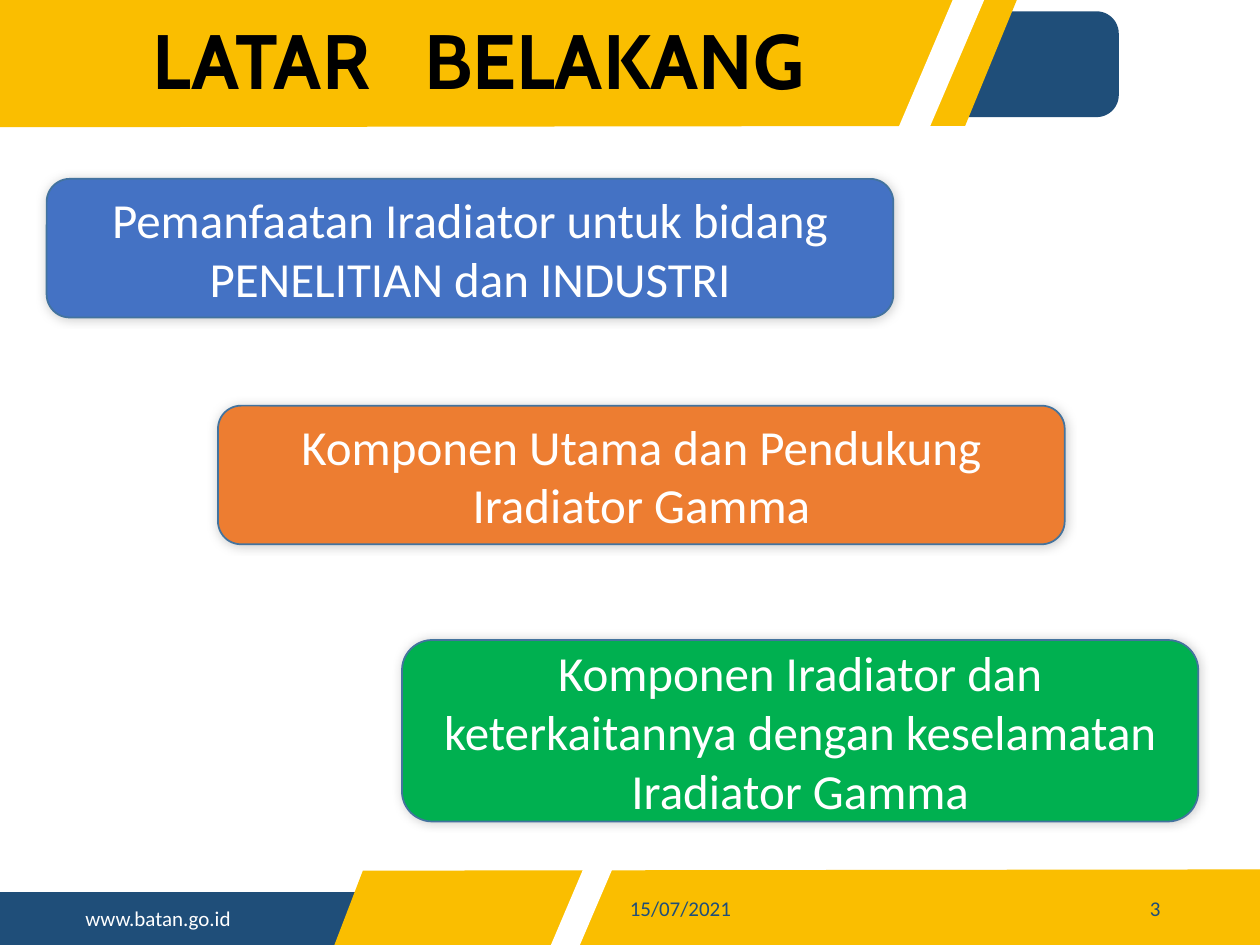
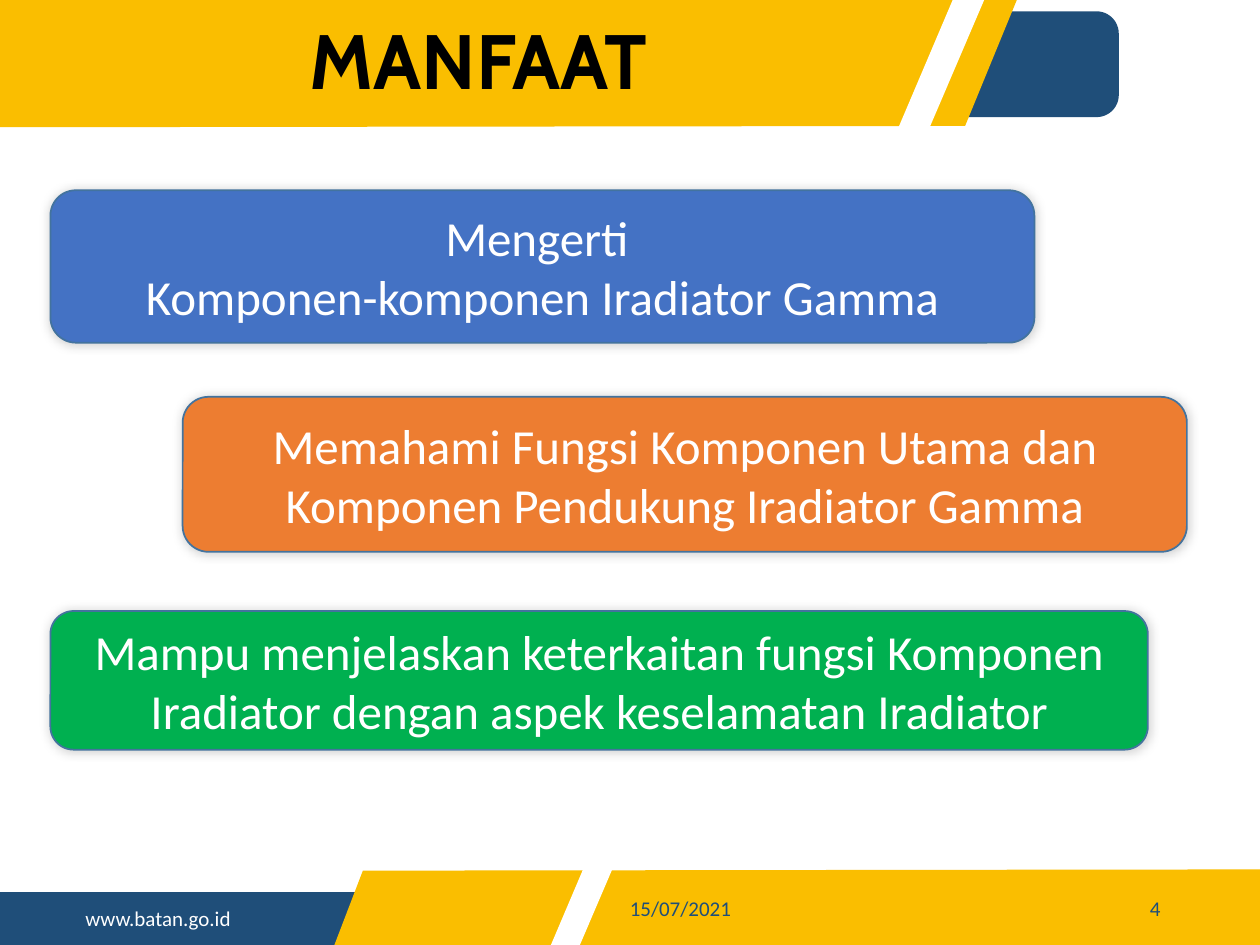
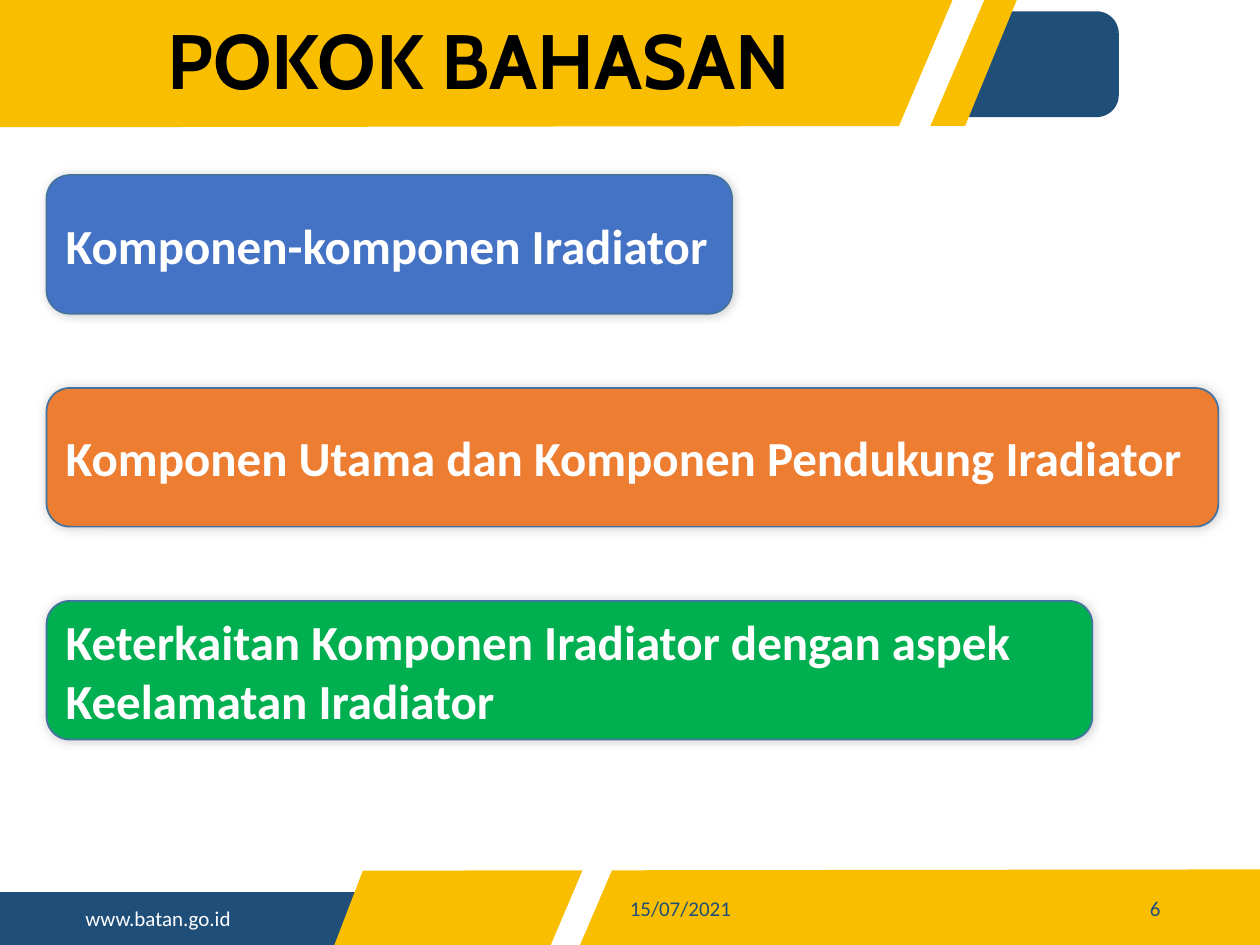
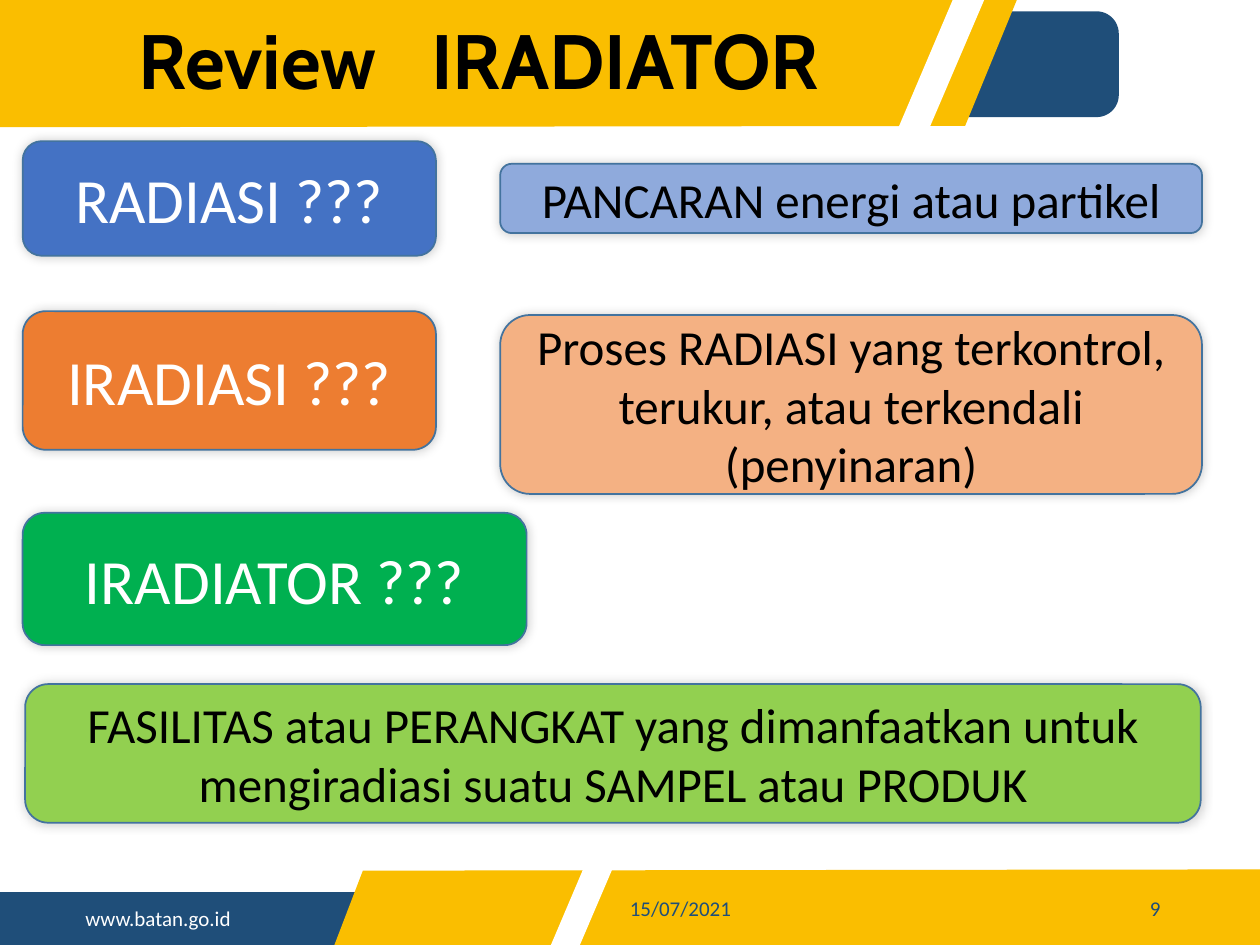
"""Build four slides about gamma irradiators, with a shared yellow and blue frame."""
from lxml import etree
from pptx import Presentation
from pptx.dml.color import RGBColor
from pptx.enum.shapes import MSO_SHAPE as SHAPE
from pptx.enum.text import MSO_ANCHOR as ANCHOR, PP_ALIGN as ALIGN
from pptx.oxml.ns import qn
from pptx.util import Inches, Pt

NAVY = RGBColor(0x1F, 0x4E, 0x79)
YELLOW = RGBColor(0xFA, 0xBE, 0x00)
WHITE = RGBColor(0xFF, 0xFF, 0xFF)
BLACK = RGBColor(0x00, 0x00, 0x00)
BLUE = RGBColor(0x44, 0x72, 0xC4)
ORANGE = RGBColor(0xED, 0x7D, 0x31)
GREEN = RGBColor(0x00, 0xB0, 0x50)
PALE_BLUE = RGBColor(0x8F, 0xAA, 0xDC)
PALE_ORANGE = RGBColor(0xF4, 0xB1, 0x83)
PALE_GREEN = RGBColor(0x92, 0xD0, 0x50)
CARD_EDGE = RGBColor(0x43, 0x73, 0x9E)
CARD_FILLS = (BLUE, ORANGE, GREEN)

BODY_FONT = "Calibri"
TITLE_FONT = "Cabin"
SITE = "www.batan.go.id"
DATE = "15/07/2021"

FOOTER_BAND = [(2.88, 6.91), (10, 6.9), (10, 7.51), (2.65, 7.51)]
TITLE_BAND = [(0, 0), (8.07, 0), (7.66, 1), (0, 1.01)]
SLASH = [(7.57, -0.02), (7.82, -0.02), (4.59, 7.53), (4.36, 7.53)]


def write(frame, text, size=12, color=BLACK, font=BODY_FONT, bold=False,
          align=ALIGN.LEFT, anchor=ANCHOR.MIDDLE, line_spacing=None, gap=0):
    """Write text into a frame, one paragraph a line; gap widens the first space."""
    frame.word_wrap = True
    frame.vertical_anchor = anchor
    for index, line in enumerate(text.split("\n")):
        paragraph = frame.add_paragraph() if index else frame.paragraphs[0]
        paragraph.alignment = align
        paragraph.line_spacing = line_spacing
        for part in line.partition(" ") if gap else [line]:
            run = paragraph.add_run()
            run.text = part
            run.font.name = font
            run.font.size = Pt(size)
            run.font.bold = bold
            run.font.color.rgb = color
            if part == " ":
                run.font._element.set("spc", str(gap * 100))


def add_text(slide, box, text, **style):
    """Add a text box at box (left, top, width, height in inches)."""
    write(slide.shapes.add_textbox(*map(Inches, box)).text_frame, text, **style)


def paint(shape, fill):
    """Give a shape a plain fill without line or shadow."""
    shape.shadow.inherit = False
    shape.fill.solid()
    shape.fill.fore_color.rgb = fill
    shape.line.fill.background()


def add_block(slide, kind, box, fill):
    """Add a plain preset shape and return it."""
    block = slide.shapes.add_shape(kind, *map(Inches, box))
    paint(block, fill)
    return block


def add_band(slide, corners, fill):
    """Add a slanted band through its corners."""
    start, *others = [(Inches(x), Inches(y)) for x, y in corners]
    outline = slide.shapes.build_freeform(*start)
    outline.add_line_segments(others, close=True)
    paint(outline.convert_to_shape(), fill)


def add_glow(shape):
    """Add a faint soft shadow around a shape."""
    effects = shape._element.spPr.find(qn("a:effectLst"))
    shadow = etree.SubElement(effects, qn("a:outerShdw"), blurRad=str(Pt(6)),
                              dist="0", dir="18900000", rotWithShape="0")
    tint = etree.SubElement(shadow, qn("a:srgbClr"), val=str(BLACK))
    etree.SubElement(tint, qn("a:alpha"), val="20000")


def add_card(slide, box, text, fill, color=WHITE, size=28, align=ALIGN.CENTER, bold=False):
    """Add a rounded card with an edge, a soft shadow and text."""
    card = add_block(slide, SHAPE.ROUNDED_RECTANGLE, box, fill)
    card.line.color.rgb = CARD_EDGE
    card.line.width = Pt(1)
    add_glow(card)
    write(card.text_frame, text, size=size, color=color, align=align, bold=bold)


def add_framed_slide(deck, title, number, gap=0):
    """Add a slide with the shared bands, title and footer."""
    slide = deck.slides.add_slide(deck.slide_layouts[6])
    add_block(slide, SHAPE.RECTANGLE, (0, 7.08, 2.97, 0.43), NAVY)
    add_band(slide, FOOTER_BAND, YELLOW)
    tab = add_block(slide, SHAPE.ROUNDED_RECTANGLE, (6.92, 0.09, 1.96, 0.84), NAVY)
    tab.adjustments[0] = 0.21
    add_band(slide, TITLE_BAND, YELLOW)
    add_text(slide, (0.58, 7.14, 2.04, 0.3), SITE, color=WHITE, anchor=ANCHOR.TOP)
    add_band(slide, SLASH, WHITE)
    add_text(slide, (0.69, 0.09, 6.22, 0.84), title, size=44, font=TITLE_FONT,
             bold=True, align=ALIGN.CENTER, line_spacing=0.9, gap=gap)
    add_text(slide, (4.9, 7.01, 2.43, 0.4), DATE, color=NAVY)
    add_text(slide, (8.68, 7.01, 0.63, 0.4), str(number), color=NAVY, align=ALIGN.RIGHT)
    return slide


def add_cards(slide, cards, **style):
    """Add (box, text) cards in the blue, orange and green order."""
    for (box, text), fill in zip(cards, CARD_FILLS):
        add_card(slide, box, text, fill, **style)


def build_background(deck):
    """Build the background slide."""
    add_cards(add_framed_slide(deck, "LATAR BELAKANG", 3, gap=21), [
        ((0.37, 1.42, 6.72, 1.1), "Pemanfaatan Iradiator untuk bidang PENELITIAN dan INDUSTRI"),
        ((1.73, 3.22, 6.72, 1.1), "Komponen Utama dan Pendukung Iradiator Gamma"),
        ((3.19, 5.08, 6.32, 1.44),
         "Komponen Iradiator dan keterkaitannya dengan keselamatan Iradiator Gamma"),
    ])


def build_benefits(deck):
    """Build the benefits slide."""
    add_cards(add_framed_slide(deck, "MANFAAT", 4), [
        ((0.4, 1.51, 7.81, 1.21), "Mengerti \nKomponen-komponen Iradiator Gamma"),
        ((1.45, 3.15, 7.97, 1.23),
         "Memahami Fungsi Komponen Utama dan Komponen Pendukung Iradiator Gamma"),
        ((0.4, 4.85, 8.71, 1.1),
         "Mampu menjelaskan keterkaitan fungsi Komponen Iradiator "
         "dengan aspek keselamatan Iradiator"),
    ])


def build_topics(deck):
    """Build the topics slide, with evenly stacked cards."""
    topics = [
        (5.44, "Komponen-komponen Iradiator"),
        (9.3, "Komponen Utama dan Komponen Pendukung Iradiator"),
        (8.3, "Keterkaitan Komponen Iradiator dengan aspek Keelamatan Iradiator"),
    ]
    cards = [((0.37, 1.39 + 1.69 * row, width, 1.1), topic)
             for row, (width, topic) in enumerate(topics)]
    add_cards(add_framed_slide(deck, "POKOK BAHASAN", 6), cards, bold=True, align=ALIGN.LEFT)


def build_review(deck):
    """Build the review slide, with three terms and their meanings."""
    slide = add_framed_slide(deck, "Review IRADIATOR", 9, gap=21)
    add_cards(slide, [
        ((0.18, 1.12, 3.28, 0.91), "RADIASI ???"),
        ((0.18, 2.47, 3.28, 1.1), "IRADIASI ???"),
        ((0.18, 4.07, 4, 1.05), "IRADIATOR ???"),
    ], size=36)
    meanings = [
        ((3.97, 1.3, 5.57, 0.55), "PANCARAN energi atau partikel", PALE_BLUE),
        ((3.97, 2.5, 5.57, 1.42),
         "Proses RADIASI yang terkontrol, terukur, atau terkendali (penyinaran)", PALE_ORANGE),
        ((0.2, 5.43, 9.33, 1.1),
         "FASILITAS atau PERANGKAT yang dimanfaatkan untuk "
         "mengiradiasi suatu SAMPEL atau PRODUK", PALE_GREEN),
    ]
    for box, meaning, fill in meanings:
        add_card(slide, box, meaning, fill, color=BLACK)


def main():
    """Build and save the deck."""
    deck = Presentation()
    deck.slide_width = Inches(10)
    deck.slide_height = Inches(7.5)
    for build in (build_background, build_benefits, build_topics, build_review):
        build(deck)
    deck.save("out.pptx")


if __name__ == "__main__":
    main()
